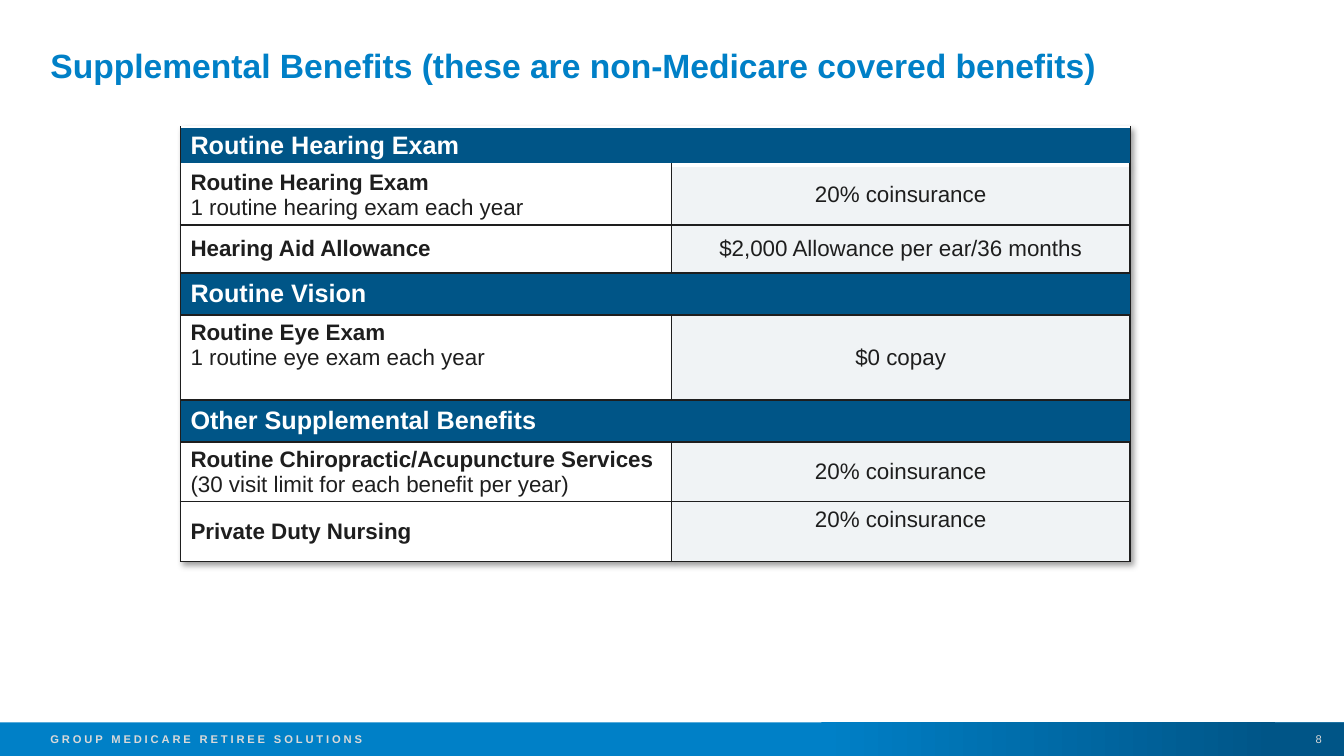
"""Build the supplemental benefits slide on an 80 by 45 grid."""
from dataclasses import dataclass

from lxml import etree
from pptx import Presentation
from pptx import util as u
from pptx.dml.color import RGBColor
from pptx.enum import shapes, text
from pptx.oxml import parse_xml
from pptx.oxml.ns import nsdecls, qn

BLUE = RGBColor(0x00, 0x80, 0xC7)
NAVY = RGBColor(0x00, 0x55, 0x87)
INK = RGBColor(0x1E, 0x1E, 0x1E)
PALE = RGBColor(0xF0, 0xF3, 0xF5)
GREY = RGBColor(0xD9, 0xD9, 0xD9)
WHITE = RGBColor(0xFF, 0xFF, 0xFF)

UNIT = u.Inches(1) / 6
FONT = "Arial"
FOOTER_TOP, FOOTER_ROWS = 43, 2
TABLE_LEFT, TABLE_TOP = 10.74, 7.56
TABLE_COLS = (29.22, 27.3)
TOP, MIDDLE = text.MSO_ANCHOR.TOP, text.MSO_ANCHOR.MIDDLE
LEFT, CENTER = text.PP_ALIGN.LEFT, text.PP_ALIGN.CENTER


@dataclass
class Band:
    """A footer rectangle, with a second colour if it is a gradient."""
    left: float
    width: float
    color: RGBColor
    end: RGBColor | None = None


@dataclass
class Benefit:
    """A table row; one without a value is a section heading."""
    height: float
    name: str
    detail: str = ""
    value: str = ""
    name_anchor: text.MSO_ANCHOR = MIDDLE
    value_anchor: text.MSO_ANCHOR = MIDDLE


BANDS = [
    Band(0, 80, BLUE),
    Band(48.9, 27, BLUE, NAVY),
    Band(75.6, 4.4, NAVY),
]
BENEFITS = [
    Benefit(2.27, "Routine Hearing Exam"),
    Benefit(3.57, "Routine Hearing Exam", "1 routine hearing exam each year", "20% coinsurance"),
    Benefit(2.86, "Hearing Aid Allowance", value="$2,000 Allowance per ear/36 months"),
    Benefit(2.5, "Routine Vision"),
    Benefit(5.06, "Routine Eye Exam", "1 routine eye exam each year", "$0 copay",
            name_anchor=TOP),
    Benefit(2.5, "Other Supplemental Benefits"),
    Benefit(3.51, "Routine Chiropractic/Acupuncture Services",
            "(30 visit limit for each benefit per year)", "20% coinsurance"),
    Benefit(3.57, "Private Duty Nursing", value="20% coinsurance", value_anchor=TOP),
]


def grid(n: float) -> u.Emu:
    """Turn grid columns or rows into a length."""
    return u.Emu(round(n * UNIT))


def write(p, words: str, *, size: float, color: RGBColor, bold: bool = False,
          align=LEFT, spacing: int = 0) -> None:
    """Put formatted words into a paragraph."""
    p.alignment = align
    r = p.add_run()
    r.text = words
    r.font.name, r.font.size, r.font.bold = FONT, u.Pt(size), bold
    r.font.color.rgb = color
    if spacing:
        r.font._element.set("spc", str(spacing * 100))


def clear_insets(tf) -> None:
    """Remove the margins of a text frame and centre it vertically."""
    tf.margin_left = tf.margin_right = tf.margin_top = tf.margin_bottom = 0
    tf.vertical_anchor = MIDDLE


def add_band(s, band: Band) -> None:
    """Draw one footer rectangle."""
    sp = s.shapes.add_shape(shapes.MSO_SHAPE.RECTANGLE, grid(band.left), grid(FOOTER_TOP),
                            grid(band.width), grid(FOOTER_ROWS))
    sp.shadow.inherit = False
    sp.line.fill.background()
    if band.end is None:
        sp.fill.solid()
        sp.fill.fore_color.rgb = band.color
        return
    sp.fill.gradient()
    sp.fill.gradient_angle = 0
    for stop, color in zip(sp.fill.gradient_stops, (band.color, band.end)):
        stop.color.rgb = color


def add_label(s, words: str, left: float, width: float, **style) -> None:
    """Place a line of text in the footer."""
    sp = s.shapes.add_textbox(grid(left), grid(FOOTER_TOP), grid(width), grid(FOOTER_ROWS))
    tf = sp.text_frame
    clear_insets(tf)
    tf.word_wrap = False
    write(tf.paragraphs[0], words, size=8, color=GREY, **style)


def set_borders(cell, top: tuple, bottom: tuple, side: float) -> None:
    """Give a cell its four borders, each a colour and a width in points."""
    edges = {"lnL": (INK, side), "lnR": (INK, side), "lnT": top, "lnB": bottom}
    props = cell._tc.get_or_add_tcPr()
    for i, (tag, (color, width)) in enumerate(edges.items()):
        props.insert(i, parse_xml(
            f'<a:{tag} {nsdecls("a")} w="{u.Pt(width)}"><a:solidFill>'
            f'<a:srgbClr val="{color}"/></a:solidFill></a:{tag}>'))


def format_cell(cell, fill: RGBColor, anchor) -> None:
    """Set the fill, anchor and vertical margins of a cell."""
    cell.fill.solid()
    cell.fill.fore_color.rgb = fill
    cell.vertical_anchor = anchor
    cell.margin_top = cell.margin_bottom = u.Inches(0.05 if anchor == TOP else 0.03)


def add_shadow(table) -> None:
    """Cast a soft shadow to the lower right of the table."""
    effects = etree.SubElement(table._tbl.tblPr, qn("a:effectLst"))
    table._tbl.tblPr.insert(0, effects)
    effects.append(parse_xml(
        f'<a:outerShdw {nsdecls("a")} blurRad="50800" dist="38100" dir="2700000" algn="tl">'
        '<a:srgbClr val="000000"><a:alpha val="40000"/></a:srgbClr></a:outerShdw>'))


def add_benefits(s) -> None:
    """Draw the table of benefits."""
    table = s.shapes.add_table(
        len(BENEFITS), len(TABLE_COLS), grid(TABLE_LEFT), grid(TABLE_TOP),
        grid(sum(TABLE_COLS)), grid(sum(b.height for b in BENEFITS))).table
    table.first_row = table.horz_banding = False
    add_shadow(table)
    for col, width in zip(table.columns, TABLE_COLS):
        col.width = grid(width)
    for i, b in enumerate(BENEFITS):
        table.rows[i].height = grid(b.height)
        name, value = table.cell(i, 0), table.cell(i, 1)
        heading = not b.value
        format_cell(name, NAVY if heading else WHITE, b.name_anchor)
        format_cell(value, NAVY if heading else PALE, b.value_anchor)
        top = {0: (WHITE, 1), 1: (WHITE, 3)}.get(i, (INK, 1))
        bottom = (WHITE, 3) if i == 0 else (INK, 1)
        for cell in (name, value):
            set_borders(cell, top, bottom, 0.5 if heading else 1)
        tf = name.text_frame
        write(tf.paragraphs[0], b.name, size=18 if heading else 16,
              color=WHITE if heading else INK, bold=True)
        if b.detail:
            write(tf.add_paragraph(), b.detail, size=16, color=INK)
        if heading:
            name.merge(value)
        else:
            write(value.text_frame.paragraphs[0], b.value, size=16, color=INK, align=CENTER)


def main() -> None:
    """Build and save the slide."""
    prs = Presentation()
    prs.slide_width, prs.slide_height = grid(80), grid(45)
    s = prs.slides.add_slide(prs.slide_layouts[5])
    for band in BANDS:
        add_band(s, band)
    add_label(s, "GROUP MEDICARE RETIREE SOLUTIONS", 3, 19.2, bold=True, spacing=2)
    add_label(s, "8", 77, 3, align=CENTER)
    title = s.shapes.title
    title.left, title.top, title.width, title.height = map(grid, (3, 2.4, 72, 2.94))
    clear_insets(title.text_frame)
    title.text_frame.auto_size = text.MSO_AUTO_SIZE.NONE
    write(title.text_frame.paragraphs[0],
          "Supplemental Benefits (these are non-Medicare covered benefits)",
          size=24, color=BLUE, bold=True)
    add_benefits(s)
    prs.save("out.pptx")


if __name__ == "__main__":
    main()
